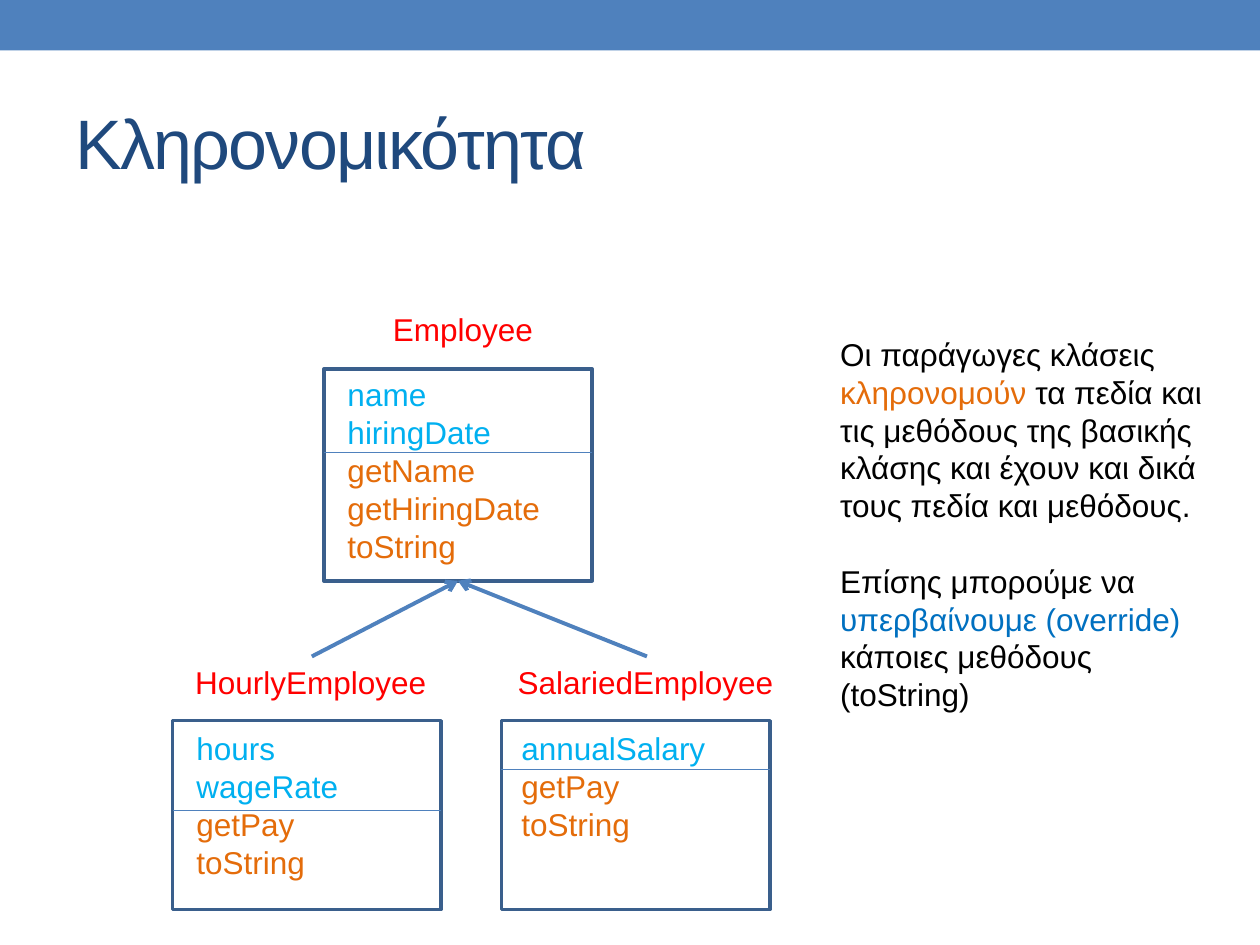
import pptx
import pptx.dml.color
import pptx.enum.dml
import pptx.enum.shapes
import pptx.enum.text
import pptx.oxml
import pptx.oxml.ns
import pptx.util

Inches = pptx.util.Inches
Pt = pptx.util.Pt
MSO_SHAPE = pptx.enum.shapes.MSO_SHAPE
STRAIGHT = pptx.enum.shapes.MSO_CONNECTOR.STRAIGHT
ANCHOR = pptx.enum.text.MSO_ANCHOR
AUTO_SIZE = pptx.enum.text.MSO_AUTO_SIZE

COLORS = {
    "band": "4F81BD",
    "outline": "3A5F8C",
    "title": "1F497D",
    "class": "FF0000",
    "field": "00B0F0",
    "method": "E46C0A",
    "body": "000000",
    "override": "0070C0",
}


def rgb(name):
    return pptx.dml.color.RGBColor.from_string(COLORS[name])


class DiagramSlide:
    """Holds the text style and the slide being drawn."""

    font_name = "Arial"
    text_size = 18
    class_width = 2.13

    def __init__(self, slide):
        self.slide = slide

    def rectangle(self, left, top, width, height, fill=None, line=None):
        box = self.slide.shapes.add_shape(
            MSO_SHAPE.RECTANGLE, *map(Inches, (left, top, width, height)))
        box.shadow.inherit = False
        if fill:
            box.fill.solid()
            box.fill.fore_color.rgb = rgb(fill)
        else:
            box.fill.background()
        if line:
            box.line.color.rgb = rgb(line)
            box.line.width = Pt(2.08)
        else:
            box.line.fill.background()
        return box

    def text(self, left, top, width, height, paragraphs, size=None, gap=0, **frame_format):
        """Each paragraph is a list of (wording, color name) runs."""
        label = self.slide.shapes.add_textbox(*map(Inches, (left, top, width, height)))
        frame = label.text_frame
        frame_values = {"word_wrap": False, "auto_size": AUTO_SIZE.SHAPE_TO_FIT_TEXT}
        frame_values.update(frame_format)
        for name, value in frame_values.items():
            setattr(frame, name, value)
        for index, runs in enumerate(paragraphs):
            paragraph = frame.add_paragraph() if index else frame.paragraphs[0]
            if index and gap:
                paragraph.space_before = Pt(gap)
            for wording, color in runs:
                run = paragraph.add_run()
                run.text = wording
                font_values = {"name": self.font_name, "size": Pt(size or self.text_size)}
                for name, value in font_values.items():
                    setattr(run.font, name, value)
                run.font.color.rgb = rgb(color)
        return label

    def line(self, start, end, width):
        connector = self.slide.shapes.add_connector(
            STRAIGHT, *map(Inches, (*start, *end)))
        connector.line.color.rgb = rgb("band")
        connector.line.width = Pt(width)
        connector._element.spPr.append(pptx.oxml.parse_xml(
            f"<a:effectLst {pptx.oxml.ns.nsdecls('a')}/>"))
        return connector

    def inheritance_arrow(self, derived_label, base_box):
        arrow = self.line((0, 0), (1, 1), 2.25)
        arrow.begin_connect(derived_label, 0)
        arrow.end_connect(base_box, 2)
        arrow.line._get_or_add_ln().append(pptx.oxml.parse_xml(
            f"<a:tailEnd {pptx.oxml.ns.nsdecls('a')} type='arrow'/>"))

    def class_box(self, name, left, top, height, name_at, members_at, divider, fields, methods):
        """Draws a class and returns its name label and its box."""
        box = self.rectangle(left, top, self.class_width, height, line="outline")
        members = [[(field, "field")] for field in fields]
        members += [[(method, "method")] for method in methods]
        self.text(*members_at, members)
        self.line((left, divider), (left + self.class_width, divider), 0.75)
        label = self.text(*name_at, [[(name, "class")]])
        return label, box


def main():
    presentation = pptx.Presentation()
    presentation.slide_width = Inches(10)
    presentation.slide_height = Inches(7.5)
    diagram = DiagramSlide(presentation.slides.add_slide(presentation.slide_layouts[6]))

    # Top band and title
    diagram.rectangle(0, 0, 10, 0.4, fill="band")
    title = diagram.text(
        0.5, 0.58, 9, 1.08, [[("Κληρονομικότητα", "title")]], size=40,
        word_wrap=True, auto_size=AUTO_SIZE.NONE, vertical_anchor=ANCHOR.MIDDLE)
    title.text_frame.paragraphs[0].runs[0].font._element.set("spc", "-100")

    # Derived classes
    hourly_label, _ = diagram.class_box(
        "HourlyEmployee", 1.37, 5.72, 1.5,
        name_at=(1.45, 5.21, 2.05, 0.4), members_at=(1.46, 5.74, 1.34, 1.31), divider=6.43,
        fields=["hours", "wageRate"], methods=["getPay", "toString"])
    salaried_label, _ = diagram.class_box(
        "SalariedEmployee", 3.98, 5.72, 1.5,
        name_at=(4.01, 5.21, 2.25, 0.4), members_at=(4.04, 5.74, 1.67, 1.01), divider=6.11,
        fields=["annualSalary"], methods=["getPay", "toString"])

    # Base class
    _, employee_box = diagram.class_box(
        "Employee", 2.57, 2.93, 1.68,
        name_at=(3.02, 2.41, 1.32, 0.4), members_at=(2.66, 2.93, 1.74, 1.62), divider=3.59,
        fields=["name", "hiringDate"], methods=["getName", "getHiringDate", "toString"])

    # Inheritance arrows
    for derived_label in (hourly_label, salaried_label):
        diagram.inheritance_arrow(derived_label, employee_box)

    # Explanation
    diagram.text(6.57, 2.61, 3.23, 3.13, [
        [("Οι παράγωγες κλάσεις ", "body"),
         ("κληρονομούν", "method"),
         (" τα πεδία και τις μεθόδους της βασικής κλάσης και έχουν και δικά τους "
          "πεδία και μεθόδους.", "body")],
        [("Επίσης μπορούμε να ", "body"),
         ("υπερβαίνουμε (override)", "override"),
         (" κάποιες μεθόδους (toString)", "body")],
    ], gap=21.6, word_wrap=True)

    presentation.save("out.pptx")


if __name__ == "__main__":
    main()
